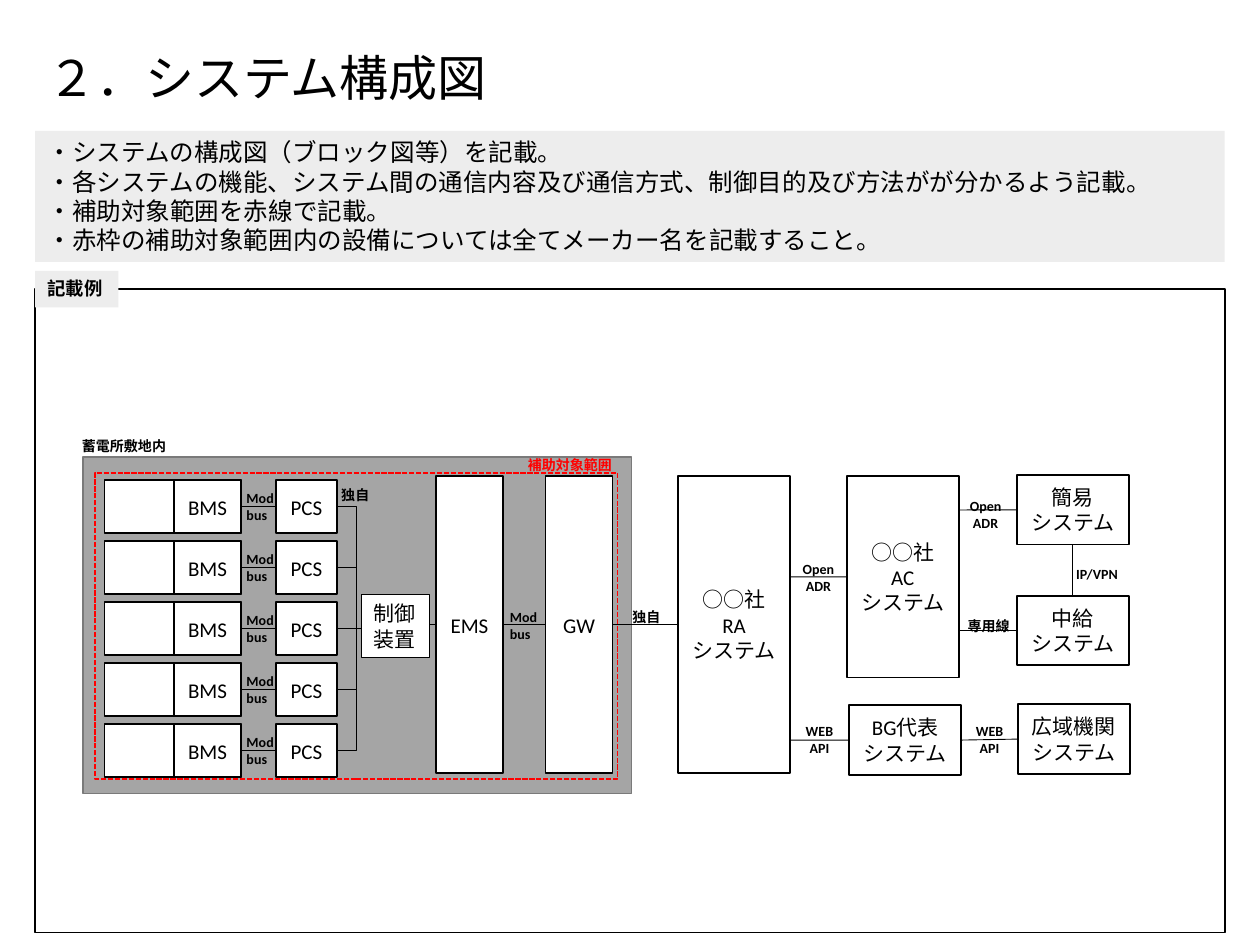
"""Build the system layout slide for a battery storage site."""
import dataclasses
import typing

import pptx
import pptx.dml.color
import pptx.enum.dml
import pptx.enum.shapes
import pptx.enum.text
import pptx.oxml.ns
import pptx.util
from lxml import etree

Cm = pptx.util.Cm
Pt = pptx.util.Pt
RGB = pptx.dml.color.RGBColor
ALIGN = pptx.enum.text.PP_ALIGN
ANCHOR = pptx.enum.text.MSO_ANCHOR
FIT = pptx.enum.text.MSO_AUTO_SIZE
WIRE = pptx.enum.shapes.MSO_CONNECTOR
TOP, LEFT, BOTTOM, RIGHT = range(4)


@dataclasses.dataclass(frozen=True)
class Theme:
    font: str = "Calibri"
    black: RGB = RGB(0, 0, 0)
    white: RGB = RGB(255, 255, 255)
    red: RGB = RGB(255, 0, 0)
    pale: RGB = RGB(0xED, 0xED, 0xED)
    grey: RGB = RGB(0xA5, 0xA5, 0xA5)
    edge: RGB = RGB(0x7A, 0x7A, 0x7A)
    title: float = 28
    note: float = 14
    body: float = 12
    tab: float = 10.5
    label: float = 8


THEME = Theme()


class Area(typing.NamedTuple):
    x: float
    y: float
    w: float
    h: float


class Spot(typing.NamedTuple):
    x: float
    y: float


class Pin(typing.NamedTuple):
    shape: typing.Any
    site: int


class Label(typing.NamedTuple):
    text: str
    area: Area
    align: typing.Any = ALIGN.CENTER
    color: RGB = THEME.black
    wrap: bool = True


def write(shape, text: str, *, size=THEME.body, bold=False, color=THEME.black,
          align=ALIGN.LEFT, anchor=ANCHOR.TOP, wrap=True, grow=False, space=None) -> None:
    frame = shape.text_frame
    frame.word_wrap = wrap
    frame.auto_size = FIT.SHAPE_TO_FIT_TEXT if grow else FIT.NONE
    frame.vertical_anchor = anchor
    for index, line in enumerate(text.split("\n")):
        para = frame.add_paragraph() if index else frame.paragraphs[0]
        para.alignment = align
        para.line_spacing = space
        run = para.add_run()
        run.text = line
        run.font.name = THEME.font
        run.font.size = Pt(size)
        run.font.bold = bold
        run.font.color.rgb = color


def block(page, area: Area, fill=THEME.white, line=THEME.black, width=1.0):
    kind = pptx.enum.shapes.MSO_SHAPE.RECTANGLE
    shape = page.shapes.add_shape(kind, *map(Cm, area))
    shape.shadow.inherit = False
    if fill is None:
        shape.fill.background()
    else:
        shape.fill.solid()
        shape.fill.fore_color.rgb = fill
    if line is None:
        shape.line.fill.background()
    else:
        shape.line.color.rgb = line
        shape.line.width = Pt(width)
    return shape


def node(page, text: str, area: Area):
    shape = block(page, area)
    write(shape, text, align=ALIGN.CENTER, anchor=ANCHOR.MIDDLE)
    return shape


def tag(page, label: Label) -> None:
    box = page.shapes.add_textbox(*map(Cm, label.area))
    write(box, label.text, size=THEME.label, bold=True, color=label.color,
          align=label.align, wrap=label.wrap, grow=True)


def join(page, start: Spot | Pin, end: Spot | Pin, kind=WIRE.STRAIGHT) -> None:
    spots = [p if isinstance(p, Spot) else Spot(0, 0) for p in (start, end)]
    wire = page.shapes.add_connector(kind, *[Cm(v) for spot in spots for v in spot])
    if isinstance(start, Pin):
        wire.begin_connect(start.shape, start.site)
    if isinstance(end, Pin):
        wire.end_connect(end.shape, end.site)
    wire.line.color.rgb = THEME.black
    wire.line.width = Pt(0.5)
    etree.SubElement(wire._element.spPr, pptx.oxml.ns.qn("a:effectLst"))


def site(page) -> typing.Any:
    """Draw the storage site and return its gateway."""
    block(page, Area(1.68, 9.22, 11.05, 6.78), THEME.grey, THEME.edge)
    ems = node(page, "EMS", Area(8.79, 9.6, 1.35, 5.99))
    gate = node(page, "GW", Area(11, 9.6, 1.35, 5.99))
    join(page, Pin(ems, RIGHT), Pin(gate, LEFT))
    for row in range(5):
        y = 9.68 + 1.23 * row
        block(page, Area(2.11, y, 2.75, 1.07))
        bms = node(page, "BMS", Area(3.51, y, 1.35, 1.07))
        pcs = node(page, "PCS", Area(5.56, y, 1.24, 1.07))
        join(page, Pin(bms, RIGHT), Pin(pcs, LEFT))
        end = Pin(ems, LEFT) if row == 2 else Spot(7.57, 12.67)
        join(page, Pin(pcs, RIGHT), end, WIRE.ELBOW)
        tag(page, Label("Mod\nbus", Area(4.72, y + 0.07, 1.14, 0.94), ALIGN.LEFT))
    scope = block(page, Area(1.91, 9.53, 10.54, 6.17), None, THEME.red)
    scope.line.dash_style = pptx.enum.dml.MSO_LINE.SQUARE_DOT
    control = block(page, Area(7.29, 11.99, 1.37, 1.27), width=0.75)
    write(control, "制御\n装置", wrap=False, grow=True)
    return gate


def grid(page, gate) -> None:
    """Draw the outside systems and wire them to the gateway."""
    wide, high = 2.26, 1.4
    agent = node(page, "○○社\nRA\nシステム", Area(13.67, 9.6, wide, 5.99))
    main = node(page, "○○社\nAC\nシステム", Area(17.07, 9.6, wide, 4.06))
    plain = node(page, "簡易\nシステム", Area(20.5, 9.58, wide, high))
    hub = node(page, "中給\nシステム", Area(20.5, 12.01, wide, high))
    group = node(page, "BG代表\nシステム", Area(17.12, 14.22, wide, high))
    broad = node(page, "広域機関\nシステム", Area(20.52, 14.2, wide, high))
    for start, end in (
        (Pin(gate, RIGHT), Pin(agent, LEFT)),
        (Spot(15.95, 11.63), Pin(main, LEFT)),
        (Spot(15.95, 14.92), Pin(group, LEFT)),
        (Spot(19.33, 10.28), Pin(plain, LEFT)),
        (Spot(19.33, 12.71), Pin(hub, LEFT)),
        (Pin(group, RIGHT), Pin(broad, LEFT)),
        (Pin(plain, BOTTOM), Pin(hub, TOP)),
    ):
        join(page, start, end)


LABELS = (
    Label("補助対象範囲", Area(10.39, 9.07, 2.24, 0.6), ALIGN.LEFT, THEME.red, False),
    Label("蓄電所敷地内", Area(1.4, 8.69, 2.24, 0.6), ALIGN.LEFT, wrap=False),
    Label("独自", Area(6.63, 9.68, 1.14, 0.6), ALIGN.LEFT),
    Label("独自", Area(12.5, 12.14, 1.14, 0.6), ALIGN.LEFT),
    Label("Modbus", Area(10.03, 12.14, 1.14, 0.94), ALIGN.LEFT),
    Label("Open\nADR", Area(15.93, 11.18, 1.14, 0.94)),
    Label("Open\nADR", Area(19.3, 9.91, 1.14, 0.94)),
    Label("WEB\nAPI", Area(15.95, 14.45, 1.14, 0.94)),
    Label("WEB\nAPI", Area(19.38, 14.45, 1.14, 0.94)),
    Label("専用線", Area(19.23, 12.32, 1.4, 0.6)),
    Label("IP/VPN", Area(21.39, 11.28, 1.45, 0.6)),
)

NOTES = """・システムの構成図（ブロック図等）を記載。
・各システムの機能、システム間の通信内容及び通信方式、制御目的及び方法がが分かるよう記載。
・補助対象範囲を赤線で記載。
・赤枠の補助対象範囲内の設備については全てメーカー名を記載すること。"""


def main() -> None:
    deck = pptx.Presentation()
    deck.slide_width, deck.slide_height = Cm(25.4), Cm(19.05)
    page = deck.slides.add_slide(deck.slide_layouts[6])
    title = page.shapes.add_textbox(*map(Cm, Area(0.71, 0.58, 23.98, 2.08)))
    write(title, "２．システム構成図", size=THEME.title, anchor=ANCHOR.MIDDLE, space=0.9)
    grid(page, site(page))
    for label in LABELS:
        tag(page, label)
    block(page, Area(0.71, 5.82, 23.98, 12.98), None)
    notes = block(page, Area(0.71, 2.64, 23.98, 2.64), THEME.pale, None)
    write(notes, NOTES, size=THEME.note, grow=True)
    tab = block(page, Area(0.71, 5.46, 1.68, 0.74), THEME.pale, None)
    write(tab, "記載例", size=THEME.tab, bold=True, wrap=False, grow=True)
    deck.save("out.pptx")


if __name__ == "__main__":
    main()
